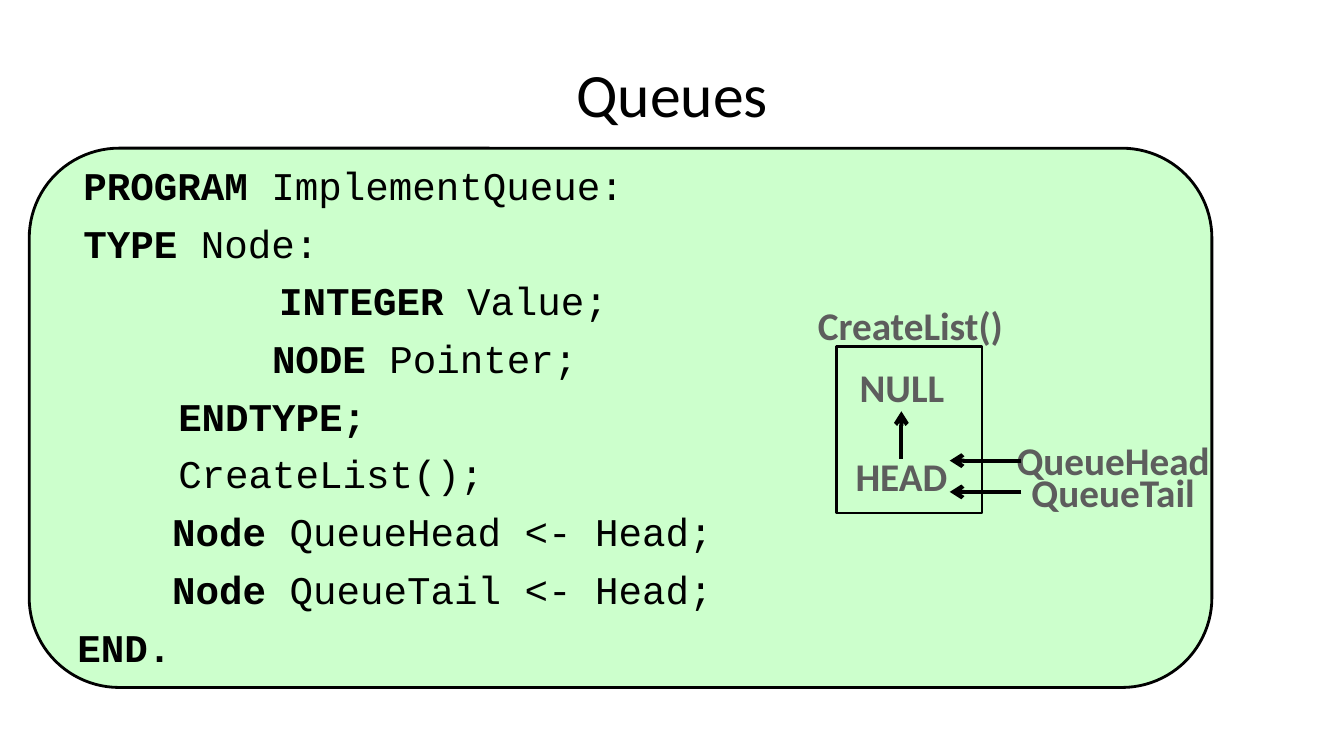
from pptx import Presentation
from pptx.dml.color import RGBColor
from pptx.enum.shapes import MSO_CONNECTOR, MSO_SHAPE
from pptx.enum.text import MSO_ANCHOR, PP_ALIGN
from pptx.oxml.ns import qn
from pptx.util import Inches, Pt
from lxml import etree

BLACK = RGBColor(0x00, 0x00, 0x00)
GREEN = RGBColor(0xCC, 0xFF, 0xCC)
GRAY = RGBColor(0x5D, 0x5D, 0x5D)

prs = Presentation()
prs.slide_width = Inches(13.33)
prs.slide_height = Inches(7.5)
s = prs.slides.add_slide(prs.slide_layouts[6])


def add_box(kind, left, top, width, height, fill=None):
    sp = s.shapes.add_shape(kind, Inches(left), Inches(top), Inches(width), Inches(height))
    sp.shadow.inherit = False
    if fill is None:
        sp.fill.background()
    else:
        sp.fill.solid()
        sp.fill.fore_color.rgb = fill
    sp.line.color.rgb = BLACK
    sp.line.width = Pt(2)


def style(r, font, size, color, bold=False):
    r.font.name = font
    r.font.size = Pt(size)
    r.font.color.rgb = color
    r.font.bold = bold


add_box(MSO_SHAPE.ROUNDED_RECTANGLE, 0.29, 1.47, 11.73, 5.35, GREEN)

code = [
    (0.06, "PROGRAM ", "ImplementQueue:"),
    (0.06, "TYPE ", "Node:"),
    (2, "INTEGER ", "Value;"),
    (1.93, "NODE", " Pointer;"),
    (1, "ENDTYPE;", ""),
    (1, "", "CreateList();"),
    (0.94, "Node ", "QueueHead <- Head;"),
    (0.94, "Node ", "QueueTail <- Head;"),
    (0, "END.", ""),
]
tf = s.shapes.add_textbox(Inches(0.67), Inches(1.55), Inches(12), Inches(4.95)).text_frame
tf.word_wrap = True
for i, (indent, keyword, rest) in enumerate(code):
    p = tf.add_paragraph() if i else tf.paragraphs[0]
    p.space_before = Pt(7.6)
    p._p.get_or_add_pPr().set("marL", str(Inches(indent)))
    for text, bold in ((keyword, True), (rest, False)):
        if text:
            r = p.add_run()
            r.text = text
            style(r, "Courier New", 28, BLACK, bold)

tf = s.shapes.add_textbox(Inches(0.67), Inches(0.3), Inches(12), Inches(1.25)).text_frame
tf.word_wrap = True
tf.vertical_anchor = MSO_ANCHOR.MIDDLE
p = tf.paragraphs[0]
p.text = "Queues"
p.alignment = PP_ALIGN.CENTER
style(p.runs[0], "Calibri", 44, BLACK)

add_box(MSO_SHAPE.RECTANGLE, 8.3, 3.44, 1.44, 1.65)

labels = [
    ("CreateList()", 8, 2.94, 2.06),
    ("NULL", 8.42, 3.56, 1.05),
    ("HEAD", 8.38, 4.44, 1.12),
    ("QueueHead", 9.97, 4.28, 2.14),
    ("QueueTail", 10.12, 4.6, 1.84),
]
for text, left, top, width in labels:
    tf = s.shapes.add_textbox(Inches(left), Inches(top), Inches(width), Inches(0.57)).text_frame
    tf.word_wrap = False
    p = tf.paragraphs[0]
    p.text = text
    p.alignment = PP_ALIGN.CENTER
    style(p.runs[0], "Calibri", 28, GRAY, True)

arrows = [
    (8.94, 4.55, 8.94, 4.08),
    (10.13, 4.57, 9.42, 4.57),
    (10.13, 4.88, 9.42, 4.88),
]
for ends in arrows:
    arrow = s.shapes.add_connector(MSO_CONNECTOR.STRAIGHT, *map(Inches, ends))
    arrow.line.color.rgb = BLACK
    arrow.line.width = Pt(3)
    etree.SubElement(arrow.line._get_or_add_ln(), qn("a:tailEnd"), type="arrow")
    etree.SubElement(arrow._element.spPr, qn("a:effectLst"))

prs.save("out.pptx")
